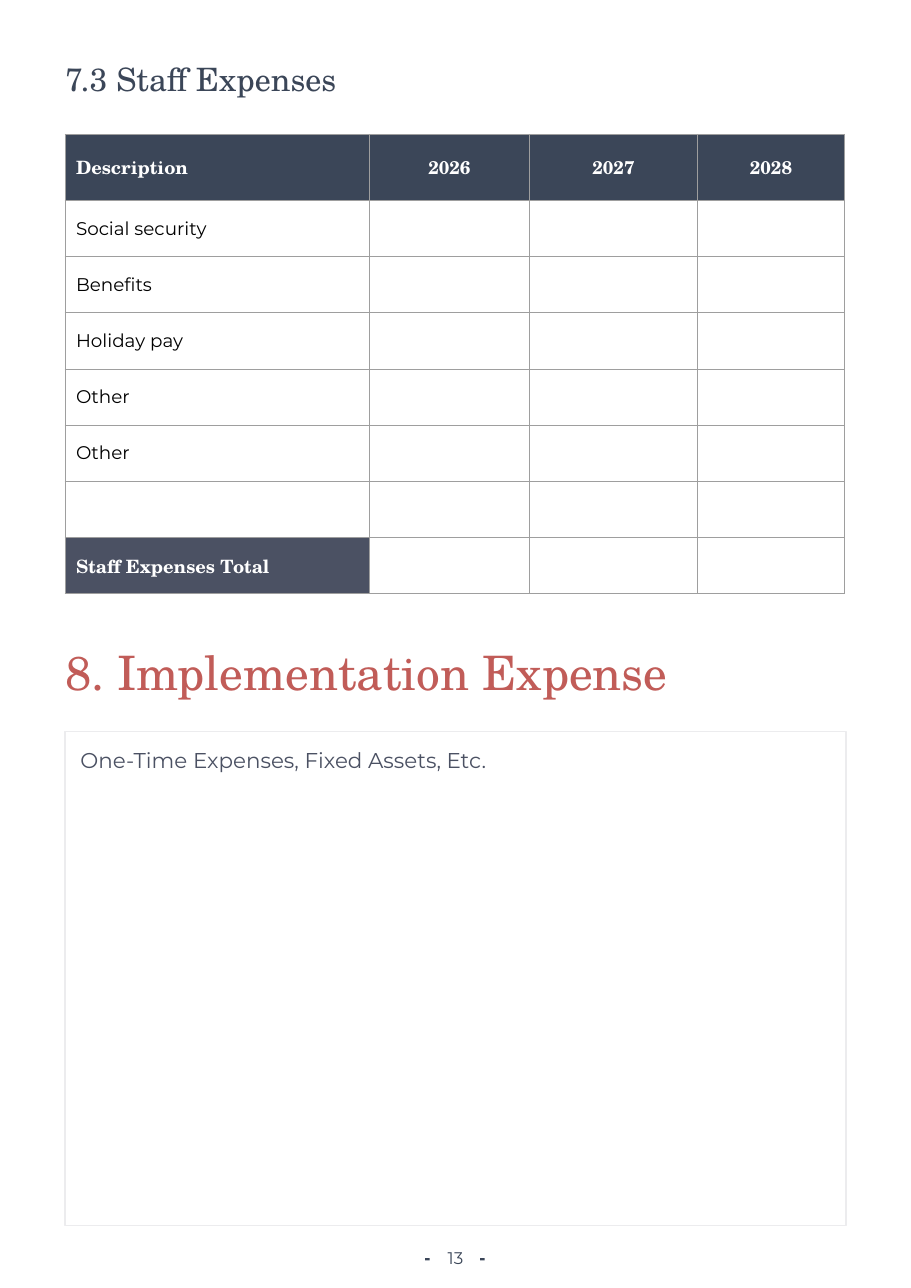
import pptx
import pptx.util
import pptx.dml.color
import pptx.enum.shapes
import pptx.enum.text
import pptx.oxml
import pptx.oxml.ns

Pt = pptx.util.Pt
RGB = pptx.dml.color.RGBColor
Align = pptx.enum.text.PP_ALIGN
Anchor = pptx.enum.text.MSO_ANCHOR
RECT = pptx.enum.shapes.MSO_SHAPE.RECTANGLE

NAVY = RGB(0x3B, 0x46, 0x58)
SLATE = RGB(0x4B, 0x51, 0x63)
CORAL = RGB(0xC1, 0x5C, 0x58)
PALE = RGB(0xEC, 0xEC, 0xEE)
GREY = RGB(0x9E, 0x9E, 0x9E)
WHITE = RGB(0xFF, 0xFF, 0xFF)
BLACK = RGB(0, 0, 0)
SERIF = "TeX Gyre Schola"
SANS = "Montserrat"

SCALE = 9144
LEFT, WIDE = 59, 709
COLS = [276, 146, 152, 134]
HEAD, ROW = 60, 51
ROWS = [
    ["Description", "2026", "2027", "2028"],
    ["Social security"],
    ["Benefits"],
    ["Holiday pay"],
    ["Other"],
    ["Other"],
    [],
    ["Staff Expenses Total"],
]


def px(*sizes):
    return [size * SCALE for size in sizes]


def place(shape, box):
    for name, size in zip(("left", "top", "width", "height"), px(*box)):
        setattr(shape, name, size)


def write(frame, text, face, size, color, bold=False, align=Align.LEFT):
    par = frame.paragraphs[0]
    par.alignment = align
    run = par.add_run()
    run.text = text
    for name, value in {"name": face, "size": Pt(size), "bold": bold}.items():
        setattr(run.font, name, value)
    run.font.color.rgb = color


def inset(frame, left=0, top=0, right=0, bottom=0):
    sides = {"left": left, "top": top, "right": right, "bottom": bottom}
    for side, size in sides.items():
        setattr(frame, "margin_" + side, size * SCALE)


def setup(frame, *sides):
    inset(frame, *sides)
    frame.word_wrap = True
    frame.auto_size = pptx.enum.text.MSO_AUTO_SIZE.NONE
    frame.vertical_anchor = Anchor.TOP


def title(slide, box):
    shape = slide.shapes.title
    place(shape, box)
    setup(shape.text_frame)
    write(shape.text_frame, "7.3 Staff Expenses", SERIF, 21, NAVY)


def label(shapes, box, *style, **extra):
    frame = shapes.add_textbox(*px(*box)).text_frame
    setup(frame)
    write(frame, *style, **extra)


def border(cell):
    props = cell._tc.get_or_add_tcPr()
    for spot, side in enumerate("LRTB"):
        line = pptx.oxml.parse_xml(
            f'<a:ln{side} {pptx.oxml.ns.nsdecls("a")} w="{Pt(0.75)}">'
            f'<a:solidFill><a:srgbClr val="{GREY}"/></a:solidFill></a:ln{side}>'
        )
        props.insert(spot, line)


def table(slide, box):
    grid = slide.shapes.add_table(len(ROWS), len(COLS), *px(*box)).table
    grid.first_row = grid.horz_banding = False
    for col, size in zip(grid.columns, COLS):
        col.width = size * SCALE
    for r, texts in enumerate(ROWS):
        grid.rows[r].height = (ROW if r else HEAD) * SCALE
        for c in range(len(COLS)):
            cell = grid.cell(r, c)
            total = r == len(ROWS) - 1 and c == 0
            strong = r == 0 or total
            if strong:
                cell.fill.solid()
                cell.fill.fore_color.rgb = SLATE if total else NAVY
            else:
                cell.fill.background()
            border(cell)
            if c < len(texts):
                inset(cell, 10, 10, 10, 10)
                cell.vertical_anchor = Anchor.MIDDLE
                write(cell.text_frame, texts[c],
                      SERIF if strong else SANS, 12,
                      WHITE if strong else BLACK, strong,
                      Align.CENTER if c else Align.LEFT)


def panel(slide, box):
    shape = slide.shapes.add_shape(RECT, *px(*box))
    shape.shadow.inherit = False
    shape.fill.background()
    shape.line.color.rgb = PALE
    shape.line.width = Pt(0.75)
    setup(shape.text_frame, 14, 14, 10, 10)
    write(shape.text_frame, "One-Time Expenses, Fixed Assets, Etc.",
          SANS, 14, SLATE)


def footer(slide, box):
    left, top, wide, high = box
    shapes = slide.shapes.add_group_shape().shapes
    label(shapes, (left + 10, top, wide - 19, high),
          "13", SANS, 11, NAVY, align=Align.CENTER)
    for x in (left, left + wide - 4):
        dash = shapes.add_shape(RECT, *px(x, top + 10, 4, 2))
        dash.shadow.inherit = False
        dash.fill.solid()
        dash.fill.fore_color.rgb = NAVY
        dash.line.fill.background()


def main():
    deck = pptx.Presentation()
    deck.slide_width, deck.slide_height = px(827, 1169)
    slide = deck.slides.add_slide(deck.slide_layouts[5])
    title(slide, (LEFT, 54, WIDE, 35))
    table(slide, (LEFT, 122, sum(COLS), HEAD + ROW * (len(ROWS) - 1)))
    label(slide.shapes, (LEFT, 584, WIDE, 52),
          "8. Implementation Expense", SERIF, 31, CORAL)
    panel(slide, (LEFT, 664, WIDE, 448))
    footer(slide, (386, 1132, 54, 19))
    deck.save("out.pptx")


if __name__ == "__main__":
    main()
